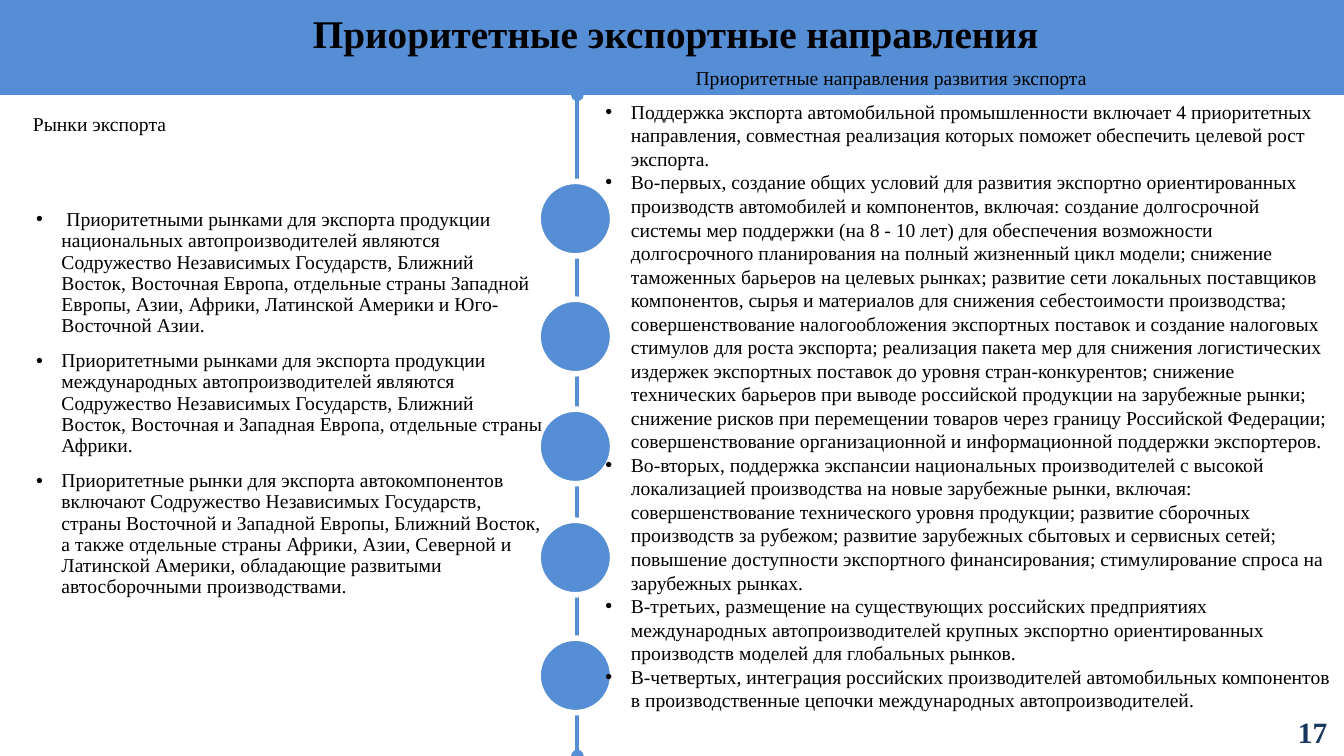
import pptx
import pptx.dml.color
import pptx.enum.shapes
import pptx.enum.text
import pptx.oxml
import pptx.oxml.ns
import pptx.util
from pptx.util import Cm

TITLE = "Приоритетные экспортные направления"
PAGE_NUMBER = "17"
MARKETS_HEADING = "Рынки экспорта"
DIRECTIONS_HEADING = "Приоритетные направления развития экспорта"
MARKETS = [
    " Приоритетными рынками для экспорта продукции национальных автопроизводителей являются "
    "Содружество Независимых Государств, Ближний Восток, Восточная Европа, отдельные страны "
    "Западной Европы, Азии, Африки, Латинской Америки и Юго-Восточной Азии.",
    "Приоритетными рынками для экспорта продукции международных автопроизводителей являются "
    "Содружество Независимых Государств, Ближний Восток, Восточная и Западная Европа, "
    "отдельные страны Африки.",
    "Приоритетные рынки для экспорта автокомпонентов включают Содружество Независимых "
    "Государств, страны Восточной и Западной Европы, Ближний Восток, а также отдельные страны "
    "Африки, Азии, Северной и Латинской Америки, обладающие развитыми автосборочными "
    "производствами.",
]
COMMON_CONDITIONS = [
    "Во-первых, создание общих условий для развития экспортно ориентированных производств "
    "автомобилей и компонентов, включая: создание долгосрочной системы мер поддержки "
    "(на 8 - 10 лет) для обеспечения возможности долгосрочного планирования на полный "
    "жизненный цикл модели",
    "снижение таможенных барьеров на целевых рынках",
    "развитие сети локальных поставщиков компонентов, сырья и материалов для снижения "
    "себестоимости производства",
    "совершенствование налогообложения экспортных поставок и создание налоговых стимулов "
    "для роста экспорта",
    "реализация пакета мер для снижения логистических издержек экспортных поставок до уровня "
    "стран-конкурентов",
    "снижение технических барьеров при выводе российской продукции на зарубежные рынки",
    "снижение рисков при перемещении товаров через границу Российской Федерации",
    "совершенствование организационной и информационной поддержки экспортеров.",
]
DIRECTIONS = [
    "Поддержка экспорта автомобильной промышленности включает 4 приоритетных направления, "
    "совместная реализация которых поможет обеспечить целевой рост экспорта.",
    "; ".join(COMMON_CONDITIONS),
    "Во-вторых, поддержка экспансии национальных производителей с высокой локализацией "
    "производства на новые зарубежные рынки, включая: совершенствование технического уровня "
    "продукции; развитие сборочных производств за рубежом; развитие зарубежных сбытовых и "
    "сервисных сетей; повышение доступности экспортного финансирования; стимулирование спроса "
    "на зарубежных рынках.",
    "В-третьих, размещение на существующих российских предприятиях международных "
    "автопроизводителей крупных экспортно ориентированных производств моделей для глобальных "
    "рынков.",
    "В-четвертых, интеграция российских производителей автомобильных компонентов в "
    "производственные цепочки международных автопроизводителей.",
]
COLORS = {"blue": "558ED5", "navy": "17375E", "black": "000000", "white": "FFFFFF"}
FONT = "Times New Roman"
WIDTH, HEIGHT, BANNER_HEIGHT = 33.87, 19.05, 2.39
AXIS_X = 14.55
CIRCLE_LEFT, CIRCLE_SIZE = 13.56, 1.88
CIRCLE_TOPS = [4.57, 7.54, 10.31, 13.11, 16.08]
BULLET_INDENT = Cm(0.64)


def color(name):
    return pptx.dml.color.RGBColor.from_string(COLORS[name])


def add_element(parent, tag, **attributes):
    element = pptx.oxml.parse_xml(f"<{tag} {pptx.oxml.ns.nsdecls('a')}/>")
    for name, value in attributes.items():
        element.set(name, value)
    parent.append(element)


def add_shape(slide, kind, left, top, width, height, outline=None):
    shape = slide.shapes.add_shape(kind, Cm(left), Cm(top), Cm(width), Cm(height))
    shape.shadow.inherit = False
    shape.fill.solid()
    shape.fill.fore_color.rgb = color("blue")
    if outline:
        shape.line.color.rgb = color(outline)
        shape.line.width = pptx.util.Pt(4)
    else:
        shape.line.fill.background()


def add_text(slide, texts, left, top, width, height, size=14, name="black", bold=False,
             bullets=False, indent=0, spacing=1.0, gap=0, align=None):
    frame = slide.shapes.add_textbox(Cm(left), Cm(top), Cm(width), Cm(height)).text_frame
    frame.word_wrap = True
    for index, text in enumerate(texts):
        paragraph = frame.add_paragraph() if index else frame.paragraphs[0]
        paragraph.text = text
        paragraph.alignment = align
        paragraph.line_spacing = spacing
        paragraph.space_before = pptx.util.Pt(gap if index else 0)
        properties = paragraph._p.get_or_add_pPr()
        if bullets:
            properties.set("marL", str(BULLET_INDENT))
            properties.set("indent", str(-BULLET_INDENT))
            add_element(properties, "a:buFont", typeface="Arial")
            add_element(properties, "a:buChar", char="•")
        elif indent:
            properties.set("marL", str(Cm(indent)))
        paragraph.font.name = FONT
        paragraph.font.size = pptx.util.Pt(size)
        paragraph.font.bold = bold
        paragraph.font.color.rgb = color(name)
    return frame


def add_axis(slide):
    axis = slide.shapes.add_connector(
        pptx.enum.shapes.MSO_CONNECTOR.STRAIGHT,
        Cm(AXIS_X), Cm(BANNER_HEIGHT), Cm(AXIS_X), Cm(HEIGHT))
    axis.line.color.rgb = color("blue")
    axis.line.width = pptx.util.Pt(3)
    for end in ("a:headEnd", "a:tailEnd"):
        add_element(axis.line._get_or_add_ln(), end, type="oval")
    add_element(axis._element.spPr, "a:effectLst")


def main():
    """Build the slide on priority export directions."""
    presentation = pptx.Presentation()
    presentation.slide_width, presentation.slide_height = Cm(WIDTH), Cm(HEIGHT)
    slide = presentation.slides.add_slide(presentation.slide_layouts[6])
    shapes = pptx.enum.shapes.MSO_SHAPE

    add_shape(slide, shapes.RECTANGLE, 0, 0, WIDTH, BANNER_HEIGHT)
    add_text(slide, [TITLE], 0.86, 0.1, 32.33, 1.4, size=28, bold=True,
             align=pptx.enum.text.PP_ALIGN.CENTER)
    number = add_text(slide, [PAGE_NUMBER], 32.41, 17.88, 1.45, 1.17, size=21,
                      name="navy", bold=True)
    number.margin_left = number.margin_right = Cm(0.3)
    number.word_wrap = False

    add_axis(slide)
    for top in CIRCLE_TOPS:
        add_shape(slide, shapes.OVAL, CIRCLE_LEFT, top, CIRCLE_SIZE, CIRCLE_SIZE, "white")

    add_text(slide, [DIRECTIONS_HEADING], 16.54, 1.6, 15.54, 1.6, indent=0.74, spacing=0.9)
    add_text(slide, [MARKETS_HEADING], 0.46, 2.77, 15.54, 1.6, indent=0.12, spacing=0.9)
    add_text(slide, MARKETS, 0.66, 5.16, 13.28, 1.6, bullets=True, spacing=0.9, gap=10)
    add_text(slide, DIRECTIONS, 15.01, BANNER_HEIGHT, 18.85, 1.6, bullets=True)
    presentation.save("out.pptx")


if __name__ == "__main__":
    main()
